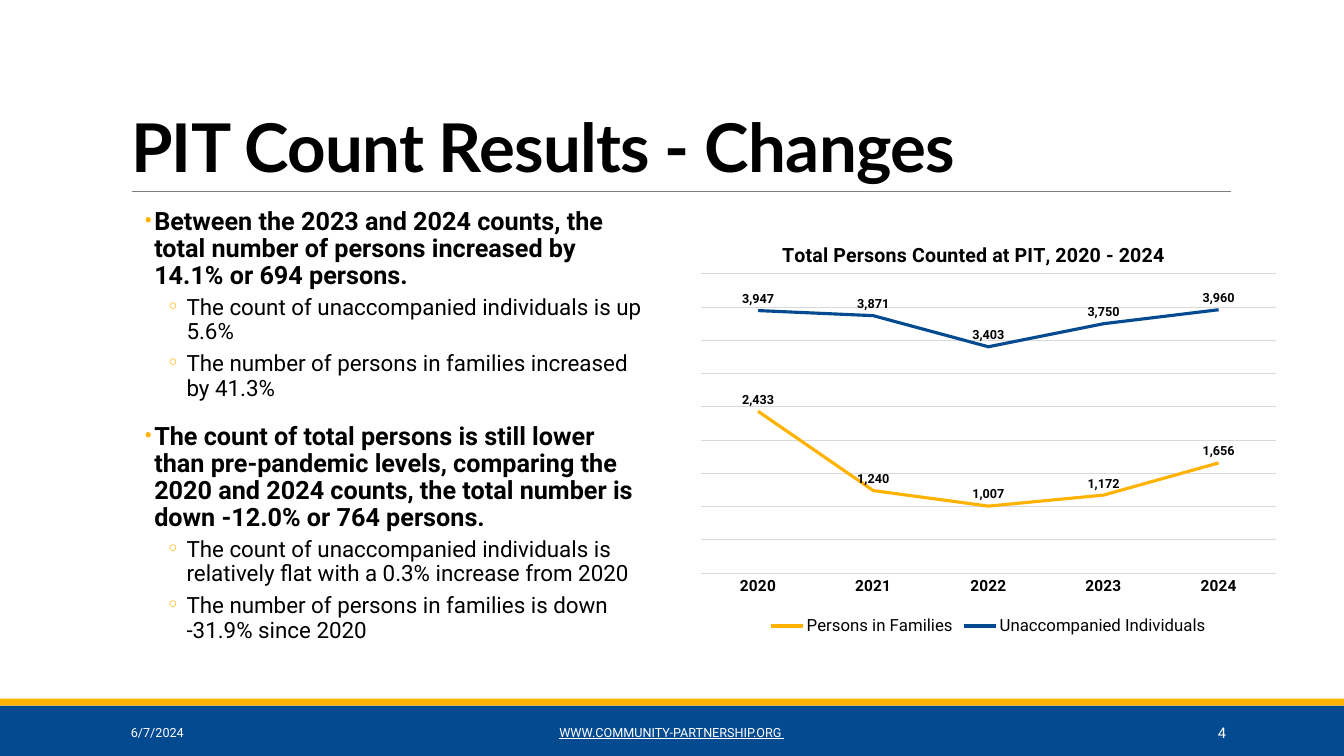
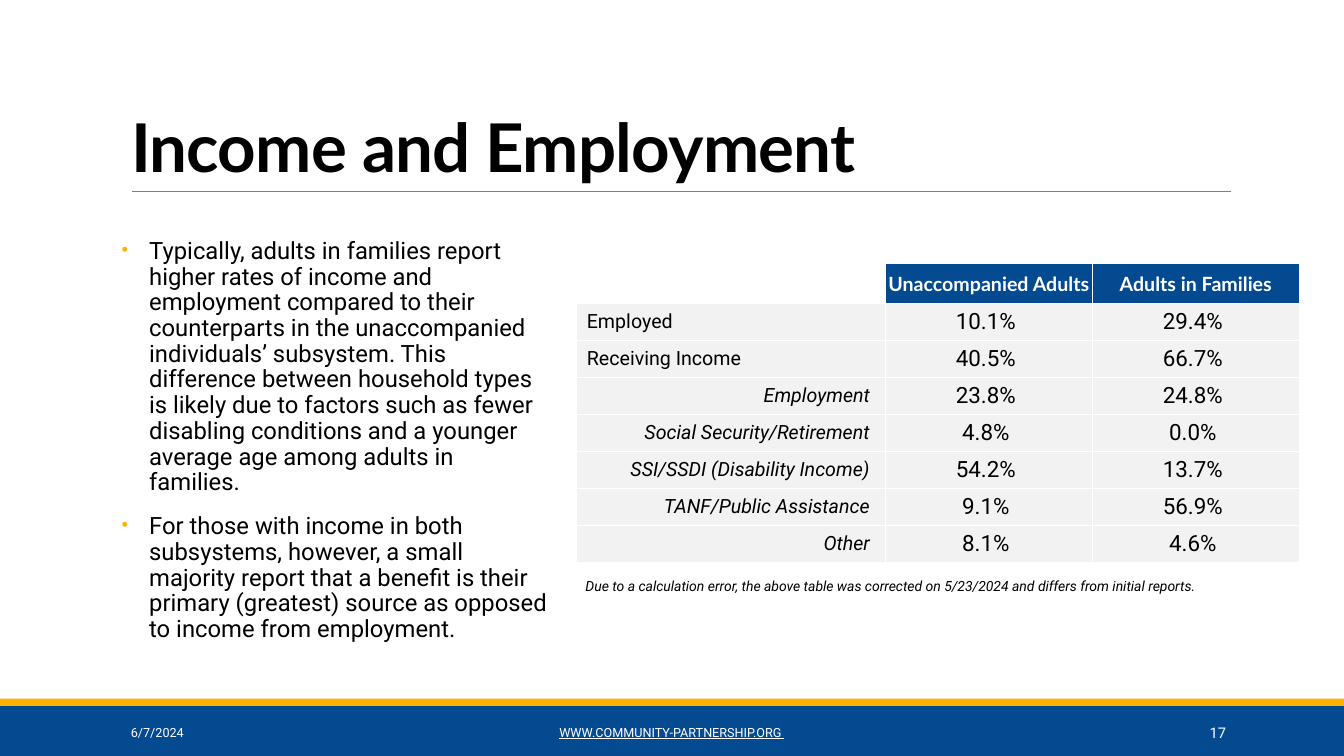
from lxml.etree import SubElement
from pptx import Presentation
from pptx.chart.data import CategoryChartData
from pptx.dml.color import RGBColor
from pptx.enum.chart import XL_CHART_TYPE, XL_LABEL_POSITION, XL_LEGEND_POSITION, XL_TICK_MARK
from pptx.enum.shapes import MSO_CONNECTOR, MSO_SHAPE
from pptx.enum.text import MSO_ANCHOR, MSO_AUTO_SIZE, PP_ALIGN
from pptx.oxml import parse_xml
from pptx.oxml.ns import nsdecls, qn
from pptx.util import Pt

# Content
COLORS = {"blue": "034A90", "gold": "FFB200", "black": "000000", "white": "FFFFFF",
          "rule": "808080", "grid": "D9D9D9", "cell": "F2F2F2"}
HEADING_FONT, TEXT_FONT = "Lato", "Roboto"
DATE = "6/7/2024"
WEBSITE = "WWW.COMMUNITY-PARTNERSHIP.ORG "

CHANGES_TITLE = "PIT Count Results - Changes"
CHANGES = [
    ("main", "Between the 2023 and 2024 counts, the total number of persons increased by 14.1% "
             "or 694 persons."),
    ("sub", "The count of unaccompanied individuals is up 5.6%"),
    ("sub", "The number of persons in families increased by 41.3%"),
    ("main", "The count of total persons is still lower than pre-pandemic levels, comparing the "
             "2020 and 2024 counts, the total number is down -12.0% or 764 persons."),
    ("sub", "The count of unaccompanied individuals is relatively flat with a 0.3% increase from 2020"),
    ("sub", "The number of persons in families is down -31.9% since 2020"),
]
CHART_TITLE = "Total Persons Counted at PIT, 2020 - 2024"
YEARS = ["2020", "2021", "2022", "2023", "2024"]
COUNTS = [
    ("Persons in Families", "gold", (2433, 1240, 1007, 1172, 1656)),
    ("Unaccompanied Individuals", "blue", (3947, 3871, 3403, 3750, 3960)),
]

INCOME_TITLE = "Income and Employment"
INCOME = [
    ("plain", "Typically, adults in families report higher rates of income and employment compared "
              "to their counterparts in the unaccompanied individuals’ subsystem. This difference "
              "between household types is likely due to factors such as fewer disabling conditions "
              "and a younger average age among adults in families."),
    ("plain", "For those with income in both subsystems, however, a small majority report that a "
              "benefit is their primary (greatest) source as opposed to income from employment."),
]
INCOME_HEADERS = ("", "Unaccompanied Adults", "Adults in Families")
INCOME_ROWS = [
    ("Employed", "10.1%", "29.4%"),
    ("Receiving Income", "40.5%", "66.7%"),
    ("Employment", "23.8%", "24.8%"),
    ("Social Security/Retirement", "4.8%", "0.0%"),
    ("SSI/SSDI (Disability Income)", "54.2%", "13.7%"),
    ("TANF/Public Assistance", "9.1%", "56.9%"),
    ("Other", "8.1%", "4.6%"),
]
MAIN_INCOME_ROWS = 2
CORRECTION = ("Due to a calculation error, the above table was corrected on 5/23/2024 "
              "and differs from initial reports.")

# List styles, lengths in points
LIST_STYLES = {
    "main": {"level": 0, "left": 7.2, "hang": 7.2, "bullet": "•", "before": 12, "after": 2,
             "font": {"size": Pt(18), "bold": True}},
    "sub": {"level": 1, "left": 30.24, "hang": 14.4, "bullet": "◦", "before": 2, "after": 4,
            "font": {"size": Pt(16), "bold": False}},
    "plain": {"level": 0, "left": 20.16, "hang": 20.16, "bullet": "•", "before": 11, "after": 2,
              "font": {"size": Pt(17), "bold": False}},
}


# Formatting helpers
def color(name):
    return RGBColor.from_string(COLORS[name])


def apply(target, **values):
    for name, value in values.items():
        setattr(target, name, value)


def format_font(font, size, color_name="black", name=TEXT_FONT, **values):
    apply(font, size=Pt(size), name=name, **values)
    font.color.rgb = color(color_name)


def format_line(line, color_name, width):
    line.color.rgb = color(color_name)
    line.width = Pt(width)


def place(shape, left, top, width, height):
    apply(shape, left=Pt(left), top=Pt(top), width=Pt(width), height=Pt(height))


def add_text(slide, box, text, size, color_name="black", alignment=PP_ALIGN.LEFT, **values):
    frame = slide.shapes.add_textbox(*map(Pt, box)).text_frame
    apply(frame, word_wrap=True, vertical_anchor=MSO_ANCHOR.MIDDLE)
    paragraph = frame.paragraphs[0]
    paragraph.alignment = alignment
    run = paragraph.add_run()
    run.text = text
    format_font(run.font, size, color_name, **values)


# Parts shared by the slides
def add_base(presentation, title, number):
    slide = presentation.slides.add_slide(presentation.slide_layouts[1])
    for top, height, color_name in ((504, 36, "blue"), (499, 5, "gold")):
        band = slide.shapes.add_shape(MSO_SHAPE.RECTANGLE, 0, Pt(top),
                                      presentation.slide_width, Pt(height))
        band.shadow.inherit = False
        band.fill.solid()
        band.fill.fore_color.rgb = color(color_name)
        band.line.fill.background()

    rule = slide.shapes.add_connector(MSO_CONNECTOR.STRAIGHT, Pt(94.3), Pt(136.8),
                                      Pt(879.1), Pt(136.8))
    format_line(rule.line, "rule", 0.5)
    SubElement(rule.element.spPr, qn("a:effectLst"))

    heading = slide.shapes.title
    place(heading, 86.4, 22.3, 792, 114.5)
    frame = heading.text_frame
    apply(frame, auto_size=MSO_AUTO_SIZE.NONE, word_wrap=True, vertical_anchor=MSO_ANCHOR.BOTTOM)
    paragraph = frame.paragraphs[0]
    apply(paragraph, alignment=PP_ALIGN.LEFT, line_spacing=0.85)
    run = paragraph.add_run()
    run.text = title
    format_font(run.font, 48, name=HEADING_FONT, bold=True)
    run.font._element.set("spc", "-50")

    footers = [
        (86.4, 194.4, DATE, 9, PP_ALIGN.LEFT, False),
        (290.2, 379.4, WEBSITE, 9, PP_ALIGN.CENTER, True),
        (779.8, 103, str(number), 10.5, PP_ALIGN.RIGHT, False),
    ]
    for left, width, text, size, alignment, underline in footers:
        add_text(slide, (left, 508.6, width, 28.8), text, size, "white", alignment,
                 underline=underline)
    return slide


def fill_list(slide, box, items):
    body = slide.placeholders[1]
    place(body, *box)
    frame = body.text_frame
    apply(frame, auto_size=MSO_AUTO_SIZE.NONE, word_wrap=True, vertical_anchor=MSO_ANCHOR.TOP,
          margin_left=0, margin_right=0, margin_top=Pt(3.6), margin_bottom=Pt(3.6))
    for index, (style_name, text) in enumerate(items):
        style = LIST_STYLES[style_name]
        paragraph = frame.add_paragraph() if index else frame.paragraphs[0]
        apply(paragraph, level=style["level"], alignment=PP_ALIGN.LEFT, line_spacing=0.9,
              space_before=Pt(style["before"] if index else 0), space_after=Pt(style["after"]))
        properties = paragraph._p.get_or_add_pPr()
        properties.set("marL", str(Pt(style["left"])))
        properties.set("indent", str(-Pt(style["hang"])))
        bullet_color = SubElement(properties, qn("a:buClr"))
        SubElement(bullet_color, qn("a:srgbClr"), val=COLORS["gold"])
        SubElement(properties, qn("a:buFont"), typeface=TEXT_FONT)
        SubElement(properties, qn("a:buChar"), char=style["bullet"])
        run = paragraph.add_run()
        run.text = text
        apply(run.font, name=TEXT_FONT, **style["font"])
        run.font.color.rgb = color("black")


# Chart
def set_layout(parent, position, inner=False, **fractions):
    old_layout = parent.find(qn("c:layout"))
    if old_layout is not None:
        parent.remove(old_layout)
    layout = parse_xml(f"<c:layout {nsdecls('c')}><c:manualLayout/></c:layout>")
    manual = layout[0]
    if inner:
        SubElement(manual, qn("c:layoutTarget"), val="inner")
    for axis in ("x", "y"):
        SubElement(manual, qn(f"c:{axis}Mode"), val="edge")
    for name, value in fractions.items():
        SubElement(manual, qn(f"c:{name}"), val=str(value))
    parent.insert(position, layout)


def add_counts_chart(slide):
    data = CategoryChartData(number_format="#,##0")
    data.categories = YEARS
    for name, _, values in COUNTS:
        data.add_series(name, values)
    box = map(Pt, (491.8, 154.8, 428.4, 302.4))
    chart = slide.shapes.add_chart(XL_CHART_TYPE.LINE, *box, data).chart
    format_font(chart.font, 10)

    chart.has_title = True
    run = chart.chart_title.text_frame.paragraphs[0].add_run()
    run.text = CHART_TITLE
    format_font(run.font, 14, bold=True)
    set_layout(chart.chart_title.element, 1, x=0.15, y=0.05)
    plot_area = chart.element.find(qn("c:chart")).find(qn("c:plotArea"))
    set_layout(plot_area, 0, inner=True, x=0.02, y=0.135, w=0.96, h=0.707)

    chart.has_legend = True
    apply(chart.legend, position=XL_LEGEND_POSITION.BOTTOM, include_in_layout=False)
    format_font(chart.legend.font, 12)

    apply(chart.category_axis, major_tick_mark=XL_TICK_MARK.NONE, minor_tick_mark=XL_TICK_MARK.NONE)
    format_font(chart.category_axis.tick_labels.font, 11, bold=True)
    format_line(chart.category_axis.format.line, "grid", 0.75)
    apply(chart.value_axis, minimum_scale=0, maximum_scale=4500, major_unit=500,
          has_major_gridlines=True, visible=False)
    format_line(chart.value_axis.major_gridlines.format.line, "grid", 0.75)

    plot = chart.plots[0]
    plot.vary_by_categories = False
    for series, (_, color_name, _) in zip(plot.series, COUNTS):
        series.smooth = False
        format_line(series.format.line, color_name, 2.25)
        apply(series.data_labels, show_value=True, position=XL_LABEL_POSITION.ABOVE,
              number_format="#,##0", number_format_is_linked=False)
        format_font(series.data_labels.font, 9, bold=True)


# Table
def add_borders(cell):
    properties = cell._tc.get_or_add_tcPr()
    for position, side in enumerate(("lnL", "lnR", "lnT", "lnB")):
        properties.insert(position, parse_xml(
            f'<a:{side} {nsdecls("a")} w="{Pt(0.75)}"><a:solidFill>'
            f'<a:srgbClr val="{COLORS["white"]}"/></a:solidFill></a:{side}>'))


def fill_cell(cell, text, fill, alignment, margins, font):
    left, right, vertical = map(Pt, margins)
    apply(cell, vertical_anchor=MSO_ANCHOR.MIDDLE, margin_left=left, margin_right=right,
          margin_top=vertical, margin_bottom=vertical)
    if text:
        cell.fill.solid()
        cell.fill.fore_color.rgb = color(fill)
        paragraph = cell.text_frame.paragraphs[0]
        paragraph.alignment = alignment
        run = paragraph.add_run()
        run.text = text
        format_font(run.font, **font)
    else:
        cell.fill.background()
    add_borders(cell)


def add_income_table(slide):
    widths = (220.4, 147.9, 147.9)
    heights = [28.2] + [25.8] * len(INCOME_ROWS)
    table = slide.shapes.add_table(len(heights), len(widths), Pt(412), Pt(188.4),
                                   Pt(sum(widths)), Pt(sum(heights))).table
    apply(table, first_row=False, horz_banding=False)
    for column, width in zip(table.columns, widths):
        column.width = Pt(width)
    for row, height in zip(table.rows, heights):
        row.height = Pt(height)

    header_font = {"size": 14, "color_name": "white", "name": HEADING_FONT, "bold": True}
    for column, text in enumerate(INCOME_HEADERS):
        fill_cell(table.cell(0, column), text, "blue", PP_ALIGN.CENTER, (0, 0, 0), header_font)
    for row, (label, *values) in enumerate(INCOME_ROWS, 1):
        is_source = row > MAIN_INCOME_ROWS
        fill_cell(table.cell(row, 0), label, "cell",
                  PP_ALIGN.RIGHT if is_source else PP_ALIGN.LEFT,
                  (7.2, 11, 3.6), {"size": 14, "italic": is_source})
        for column, value in enumerate(values, 1):
            fill_cell(table.cell(row, column), value, "cell", PP_ALIGN.CENTER,
                      (7.2, 11.5, 3.6), {"size": 16})


# Slides
def main():
    presentation = Presentation()
    apply(presentation, slide_width=Pt(960), slide_height=Pt(540))

    slide = add_base(presentation, CHANGES_TITLE, 4)
    fill_list(slide, (103, 145.4, 356.4, 334), CHANGES)
    add_counts_chart(slide)

    slide = add_base(presentation, INCOME_TITLE, 17)
    fill_list(slide, (86.4, 167, 306, 290), INCOME)
    add_income_table(slide)
    add_text(slide, (411.1, 409, 503.3, 19.4), CORRECTION, 10, italic=True)

    presentation.save("out.pptx")


if __name__ == "__main__":
    main()
